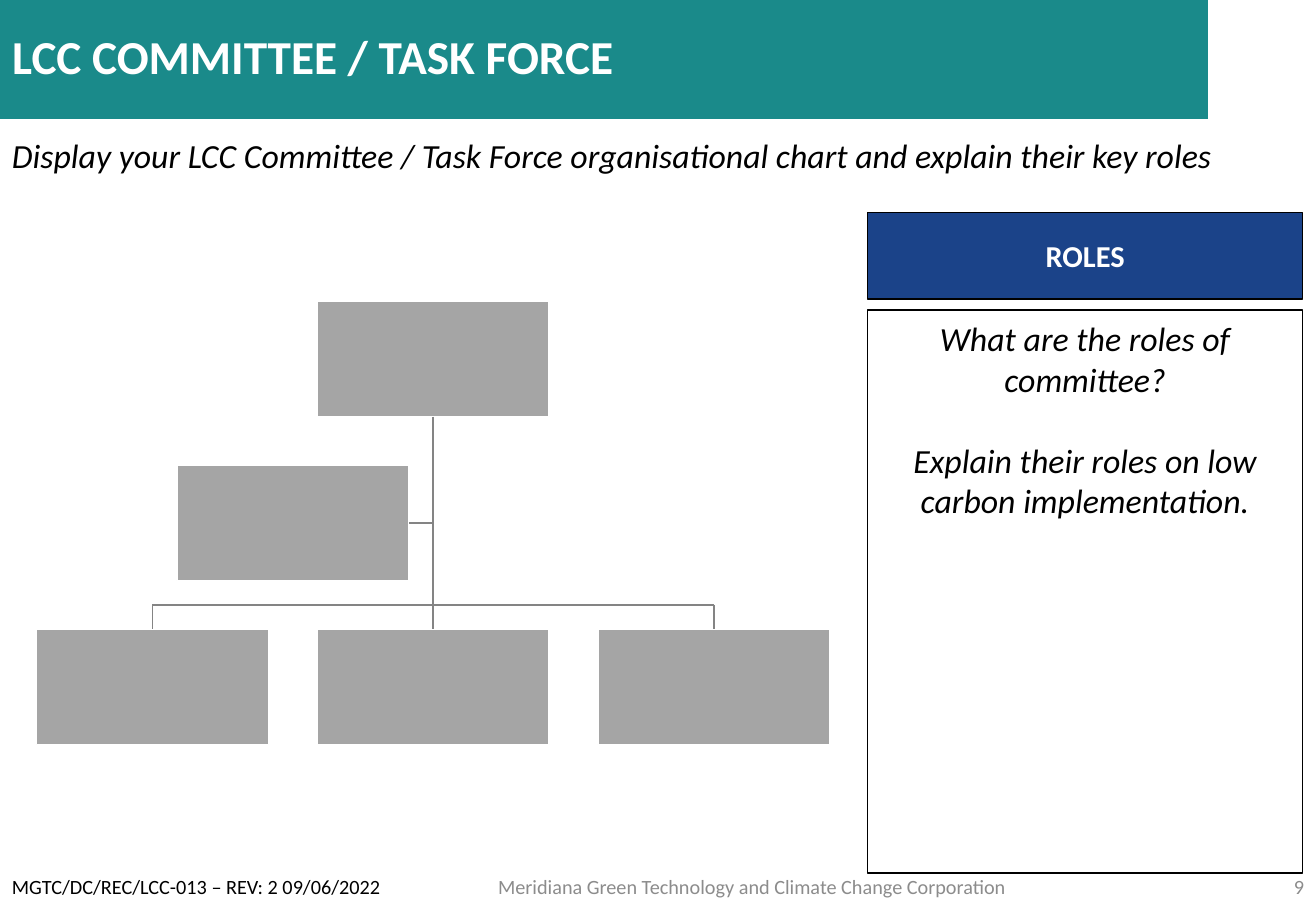
from dataclasses import dataclass

from lxml.etree import SubElement
from pptx import Presentation
from pptx.dml.color import RGBColor
from pptx.enum.shapes import MSO_CONNECTOR, MSO_SHAPE
from pptx.enum.text import MSO_ANCHOR, MSO_AUTO_SIZE, PP_ALIGN
from pptx.oxml.ns import qn
from pptx.util import Inches, Pt


@dataclass(frozen=True)
class Theme:
    """Colours, font and type sizes of the slide."""
    font: str = "Calibri"
    teal: str = "1A8A8A"
    blue: str = "1B4389"
    box: str = "A5A5A5"
    branch: str = "848484"
    muted: str = "8C8C8C"
    black: str = "000000"
    white: str = "FFFFFF"
    title: int = 28
    body: int = 20
    heading: int = 18
    footer: int = 12


THEME = Theme()
BOX_W, BOX_H = 1.91, 0.95
CHART_LEFT, CHART_TOP = 0.3, 2.48
COL_STEP, ROW_STEP = BOX_W + 0.4, BOX_H + 0.4
ROLES_LEFT, ROLES_W = 7.14, 3.58
FOOTER_TOP, FOOTER_H = 7.1, 0.4


def rgb(color):
    """Turn a hex string into a colour."""
    return RGBColor.from_string(color)


def write(sp, lines, size, color, align=PP_ALIGN.LEFT, anchor=MSO_ANCHOR.MIDDLE,
          bold=False, italic=False, gap=0):
    """Put formatted paragraphs into a shape."""
    tf = sp.text_frame
    tf.word_wrap = True
    tf.auto_size = MSO_AUTO_SIZE.NONE
    tf.vertical_anchor = anchor
    tf.text = "\n".join(lines)
    for i, p in enumerate(tf.paragraphs):
        p.alignment = align
        if i:
            p.space_before = Pt(gap)
        for r in p.runs:
            r.font.name = THEME.font
            r.font.size = Pt(size)
            r.font.bold = bold
            r.font.italic = italic
            r.font.color.rgb = rgb(color)


def add_title(s, text):
    """Format the title placeholder as the teal banner."""
    sp = s.shapes.title
    sp.left, sp.top = Inches(0), Inches(0)
    sp.width, sp.height = Inches(9.94), Inches(0.98)
    sp.fill.solid()
    sp.fill.fore_color.rgb = rgb(THEME.teal)
    write(sp, [text], THEME.title, THEME.white, bold=True)
    sp.text_frame.paragraphs[0].line_spacing = 0.9


def add_text(s, x, y, w, h, lines, size, color, **style):
    """Add a text box."""
    sp = s.shapes.add_textbox(Inches(x), Inches(y), Inches(w), Inches(h))
    write(sp, lines, size, color, **style)


def add_box(s, x, y, w, h, line, fill=None):
    """Add a rectangle, unfilled unless a fill is given."""
    sp = s.shapes.add_shape(MSO_SHAPE.RECTANGLE, Inches(x), Inches(y), Inches(w), Inches(h))
    sp.shadow.inherit = False
    if fill:
        sp.fill.solid()
        sp.fill.fore_color.rgb = rgb(fill)
    else:
        sp.fill.background()
    sp.line.color.rgb = rgb(line)
    sp.line.width = Pt(1)
    return sp


def add_branch(s, x1, y1, x2, y2, begin=None, end=None):
    """Add a chart line, joined to (shape, site) pairs where given."""
    cx = s.shapes.add_connector(MSO_CONNECTOR.STRAIGHT, Inches(x1), Inches(y1),
                                Inches(x2), Inches(y2))
    cx.line.color.rgb = rgb(THEME.branch)
    cx.line.width = Pt(1)
    SubElement(cx._element.spPr, qn("a:effectLst"))
    if begin:
        cx.begin_connect(*begin)
    if end:
        cx.end_connect(*end)


def add_org_chart(s):
    """Draw the head, the assistant and the three members with their branches."""
    def node(col, row):
        return add_box(s, CHART_LEFT + col * COL_STEP, CHART_TOP + row * ROW_STEP,
                       BOX_W, BOX_H, THEME.white, THEME.box)

    head, assistant = node(1, 0), node(0.5, 1)
    members = [node(col, 2) for col in range(3)]
    centers = [CHART_LEFT + col * COL_STEP + BOX_W / 2 for col in range(3)]
    trunk = centers[1]
    member_top = CHART_TOP + 2 * ROW_STEP
    bus = member_top - 0.2
    side = CHART_TOP + ROW_STEP + BOX_H / 2
    assistant_right = CHART_LEFT + COL_STEP / 2 + BOX_W

    add_branch(s, trunk, CHART_TOP + BOX_H, trunk, member_top, (head, 2), (members[1], 0))
    add_branch(s, trunk, side, assistant_right, side, end=(assistant, 3))
    add_branch(s, centers[0], bus, centers[2], bus)
    for i in (0, 2):
        add_branch(s, centers[i], bus, centers[i], member_top, end=(members[i], 0))


def add_roles(s):
    """Draw the roles heading and the panel under it."""
    heading = add_box(s, ROLES_LEFT, 1.75, ROLES_W, 0.71, THEME.black, THEME.blue)
    write(heading, ["ROLES"], THEME.heading, THEME.white, align=PP_ALIGN.CENTER, bold=True)
    panel = add_box(s, ROLES_LEFT, 2.55, ROLES_W, 4.64, THEME.black)
    write(panel, ["What are the roles of committee?",
                  "Explain their roles on low carbon implementation."],
          THEME.body, THEME.black, align=PP_ALIGN.CENTER, anchor=MSO_ANCHOR.TOP,
          italic=True, gap=24)
    panel.text_frame.margin_top = Inches(0.07)


def add_footer(s):
    """Add the document reference, organisation and page number."""
    for x, w, text, color, align in (
        (0, 3.49, "MGTC/DC/REC/LCC-013 – REV: 2 09/06/2022", THEME.black, PP_ALIGN.LEFT),
        (2.44, 7.5, "Meridiana Green Technology and Climate Change Corporation",
         THEME.muted, PP_ALIGN.CENTER),
        (9.94, 0.89, "9", THEME.muted, PP_ALIGN.RIGHT),
    ):
        add_text(s, x, FOOTER_TOP, w, FOOTER_H, [text], THEME.footer, color, align=align)


def main():
    """Build and save the slide."""
    prs = Presentation()
    prs.slide_width, prs.slide_height = Inches(10.83), Inches(7.5)
    s = prs.slides.add_slide(prs.slide_layouts[5])
    add_title(s, "LCC COMMITTEE / TASK FORCE")
    add_text(s, 0, 1.06, 10.83, 0.44,
             ["Display your LCC Committee / Task Force organisational chart "
              "and explain their key roles"],
             THEME.body, THEME.black, anchor=MSO_ANCHOR.TOP, italic=True)
    add_org_chart(s)
    add_roles(s)
    add_footer(s)
    prs.save("out.pptx")


if __name__ == "__main__":
    main()
